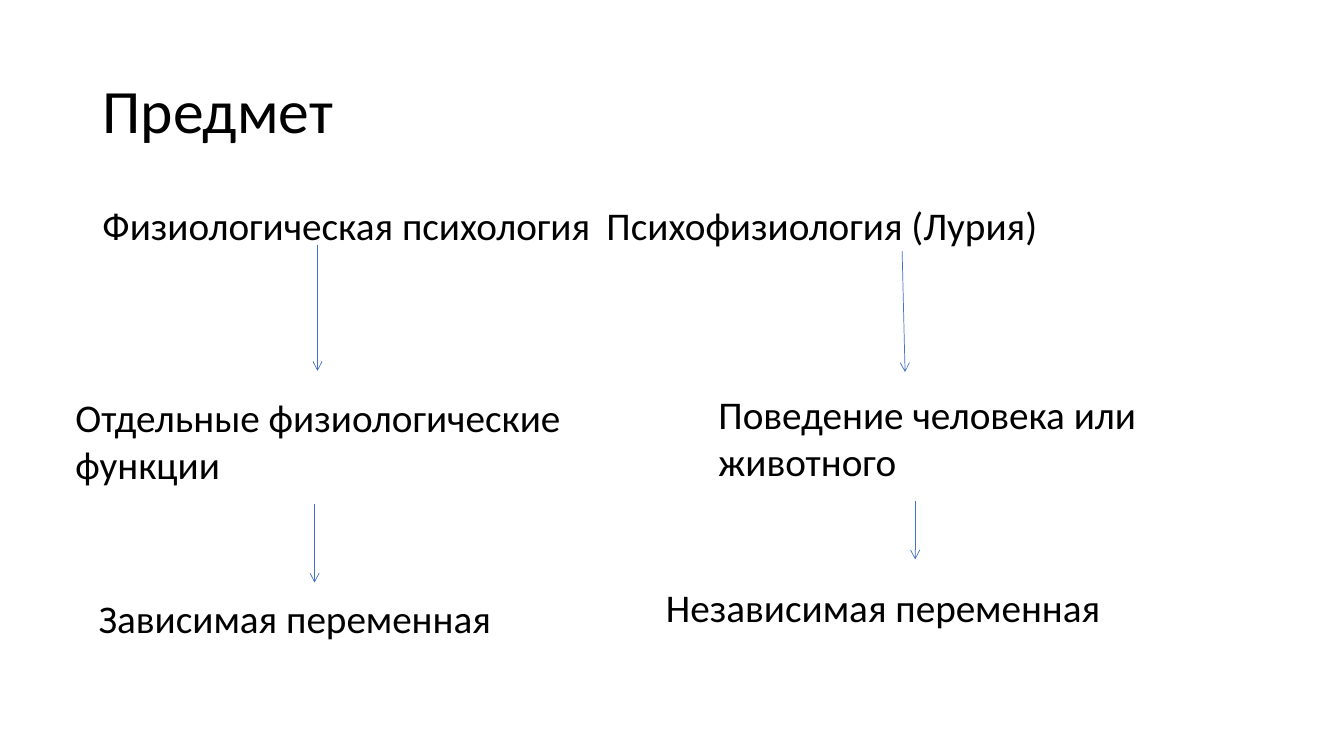
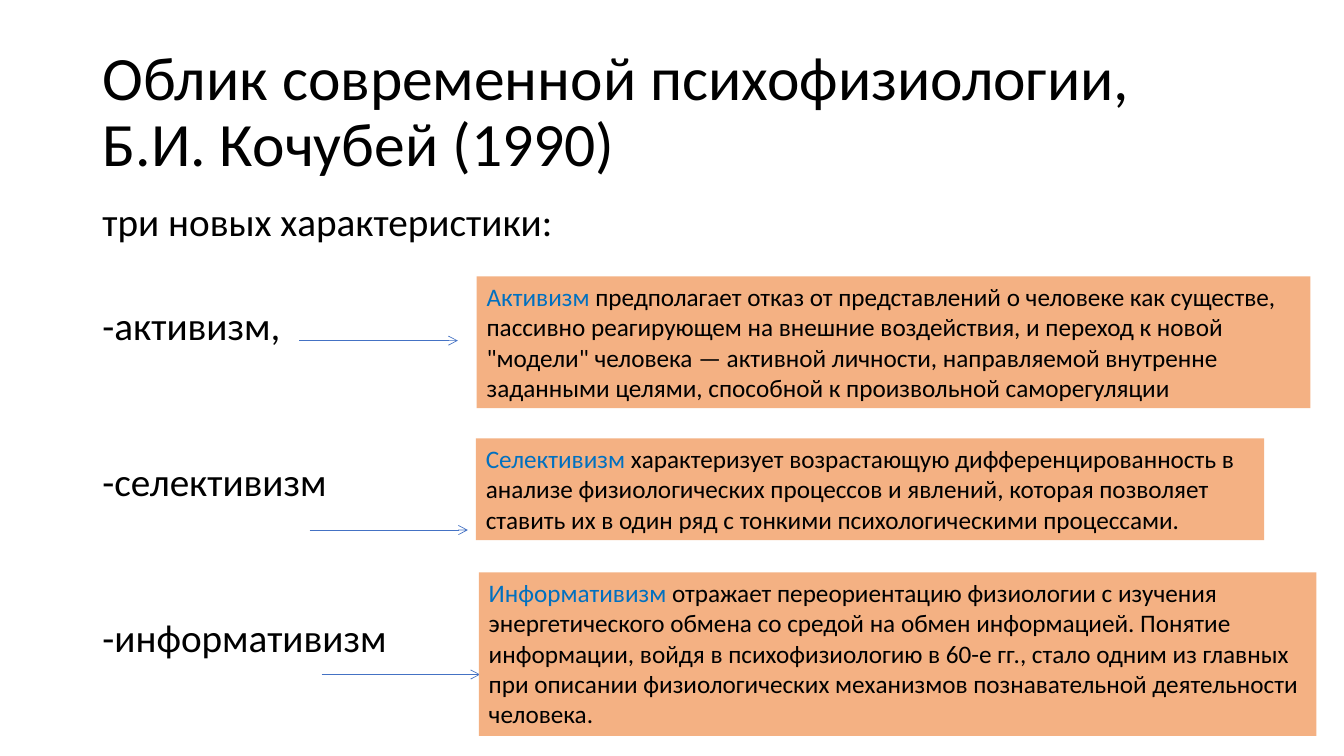
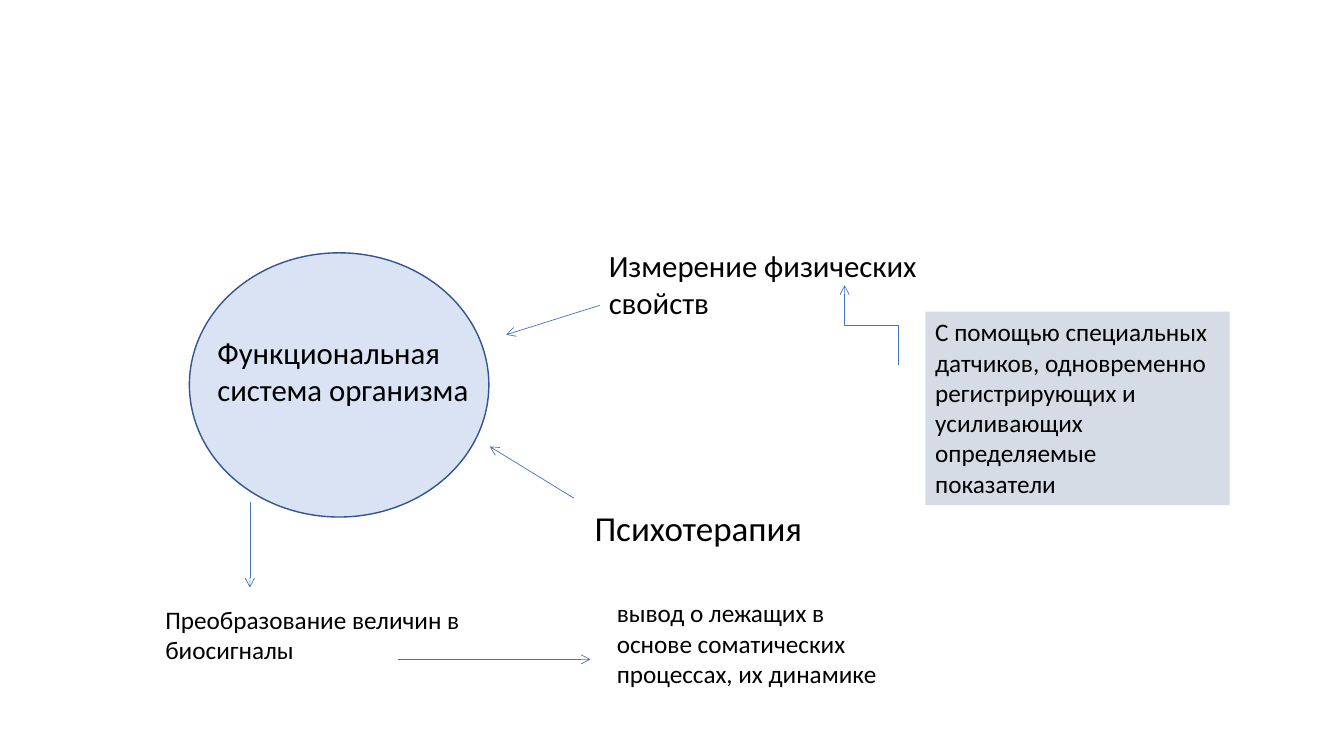
from pptx import Presentation
from pptx.dml.color import RGBColor
from pptx.enum.shapes import MSO_CONNECTOR, MSO_SHAPE
from pptx.enum.text import MSO_ANCHOR, MSO_AUTO_SIZE, PP_ALIGN
from pptx.oxml.ns import qn
from pptx.util import Inches, Pt
from lxml.etree import SubElement

COLS, ROWS = 32, 18
LIST, BLANK = 1, 6


def tint(code):
    return RGBColor.from_string(code)


class Deck:
    font = "Calibri"
    ink, line, accent = "000000", "4472C4", "0070C0"

    def __init__(self):
        self.prs = Presentation()
        self.prs.slide_width = Inches(13.333)
        self.prs.slide_height = Inches(7.5)
        self.page = None

    # Grid and text helpers
    def x(self, col):
        return round(self.prs.slide_width * col / COLS)

    def y(self, row):
        return round(self.prs.slide_height * row / ROWS)

    def area(self, col, row, wide, high):
        return self.x(col), self.y(row), self.x(wide), self.y(high)

    def style(self, para, size):
        font = para.font
        font.name, font.size = self.font, Pt(size)
        font.color.rgb = tint(self.ink)

    def frame(self, shape, anchor=MSO_ANCHOR.TOP):
        frame = shape.text_frame
        frame.word_wrap = True
        frame.auto_size = MSO_AUTO_SIZE.NONE
        frame.vertical_anchor = anchor
        return frame

    # Slides and placeholders
    def add(self, layout):
        self.page = self.prs.slides.add_slide(self.prs.slide_layouts[layout])

    def place(self, shape, *box):
        shape.left, shape.top, shape.width, shape.height = self.area(*box)

    def title(self, words):
        shape = self.page.shapes.title
        self.place(shape, 2.2, 0.95, 27.6, 3.5)
        frame = self.frame(shape, MSO_ANCHOR.MIDDLE)
        frame.text = words
        para = frame.paragraphs[0]
        para.alignment, para.line_spacing = PP_ALIGN.LEFT, 0.9
        self.style(para, 44)

    def body(self, items, pitch, tab=None):
        """Items are pairs of text and space before in points."""
        shape = self.page.placeholders[1]
        self.place(shape, 2.2, 4.8, 27.6, 11.4)
        frame = self.frame(shape)
        for i, (words, gap) in enumerate(items):
            para = frame.add_paragraph() if i else frame.paragraphs[0]
            para.text = words
            para.line_spacing, para.space_before = pitch, Pt(gap)
            props = para._p.get_or_add_pPr()
            props.set("marL", "0")
            props.set("indent", "0")
            SubElement(props, qn("a:buNone"))
            if tab:
                stops = SubElement(props, qn("a:tabLst"))
                SubElement(stops, qn("a:tab"), pos=str(self.x(tab)), algn="l")
            self.style(para, 28)

    # Text, with an optional fill and a coloured first word
    def text(self, words, size, *box, fill=None, lead=None):
        shape = self.page.shapes.add_textbox(*self.area(*box))
        if fill:
            shape.fill.solid()
            shape.fill.fore_color.rgb = tint(fill)
        para = self.frame(shape).paragraphs[0]
        if lead:
            run = para.add_run()
            run.text = lead
            run.font.color.rgb = tint(self.accent)
        para.add_run().text = words
        self.style(para, size)

    def oval(self, *box):
        shape = self.page.shapes.add_shape(MSO_SHAPE.OVAL, *self.area(*box))
        shape.shadow.inherit = False
        shape.fill.solid()
        shape.fill.fore_color.rgb = tint("DAE3F3")
        shape.line.color.rgb = tint("325491")
        shape.line.width = Pt(1)

    # Arrows
    def arrow(self, col, row, to_col, to_row, kind=MSO_CONNECTOR.STRAIGHT):
        link = self.page.shapes.add_connector(
            kind, self.x(col), self.y(row), self.x(to_col), self.y(to_row))
        link.line.color.rgb = tint(self.line)
        link.line.width = Pt(0.5)
        SubElement(link.line._get_or_add_ln(), qn("a:tailEnd"), type="arrow")
        SubElement(link._element.spPr, qn("a:effectLst"))
        return link

    def elbow(self, col, row, to_col, to_row):
        """Bent arrow that leaves upwards, steps left and goes on upwards."""
        mid, level = (col + to_col) / 2, (row + to_row) / 2
        run, rise = (row - to_row) / 2, (col - to_col) / 2
        link = self.arrow(mid - run, level + rise, mid + run, level - rise,
                          MSO_CONNECTOR.ELBOW)
        link._element.spPr.find(qn("a:xfrm")).set("rot", str(270 * 60000))


def subject(deck):
    deck.add(LIST)
    deck.title("Предмет")
    deck.body([("Физиологическая психология\tПсихофизиология (Лурия)", 0)],
              0.9, tab=14.57)
    for words, *box in (
        ("Отдельные физиологические функции", 1.56, 9.24, 12.36, 2.5),
        ("Поведение человека или животного", 16.87, 9.17, 11.64, 2.5),
        ("Независимая переменная", 15.62, 13.78, 13.58, 1.37),
        ("Зависимая переменная", 2.11, 14.04, 11.26, 1.37),
    ):
        deck.text(words, 28, *box)
    for ends in ((7.56, 5.83, 7.56, 8.83), (21.48, 5.98, 21.55, 8.86),
                 (21.79, 11.93, 21.79, 13.32), (7.49, 12, 7.49, 13.87)):
        deck.arrow(*ends)


def traits(deck):
    deck.add(LIST)
    deck.title("Облик современной психофизиологии,\vБ.И. Кочубей (1990)")
    deck.body([("три новых характеристики:", 0), ("-активизм,", 47.3),
               ("-селективизм", 84.6), ("-информативизм", 84.6)], 0.8)
    for col, row in ((7.13, 8.11), (7.37, 12.62), (7.66, 16.06)):
        deck.arrow(col, row, col + 3.77, row)
    for lead, words, *box in (
        ("Активизм", " предполагает отказ от представлений о человеке как "
         "существе, пассивно реагирующем на внешние воздействия, и переход к "
         "новой \"модели\" человека — активной личности, направляемой "
         "внутренне заданными целями, способной к произвольной саморегуляции",
         11.35, 6.58, 19.85, 3.14),
        ("Селективизм", " характеризует возрастающую дифференцированность в "
         "анализе физиологических процессов и явлений, которая позволяет "
         "ставить их в один ряд с тонкими психологическими процессами.",
         11.33, 10.44, 18.77, 2.42),
        ("Информативизм ", "отражает переориентацию физиологии с изучения "
         "энергетического обмена со средой на обмен информацией. Понятие "
         "информации, войдя в психофизиологию в 60-е гг., стало одним из "
         "главных при описании физиологических механизмов познавательной "
         "деятельности человека.", 11.4, 13.63, 19.94, 3.89),
    ):
        deck.text(words, 18, *box, fill="F4B183", lead=lead)


def system(deck):
    deck.add(BLANK)
    deck.oval(4.51, 6.02, 7.13, 6.29)
    for words, size, *box in (
        ("Функциональная система организма", 22, 4.94, 7.82, 7.2, 2.74),
        ("Измерение физических свойств", 22, 14.26, 5.76, 8.02, 2.74),
        ("Преобразование величин в биосигналы", 18, 3.7, 14.26, 9.89, 2.42),
        ("вывод о лежащих в основе соматических процессах, их динамике", 18,
         14.45, 14.11, 7.13, 2.42),
        ("Психотерапия", 25, 13.92, 11.95, 7.61, 1.97),
    ):
        deck.text(words, size, *box)
    deck.text("С помощью специальных датчиков, одновременно регистрирующих и "
              "усиливающих определяемые показатели", 18,
              22.03, 7.42, 7.25, 4.61, fill="D6DCE5")
    for ends in ((14.28, 7.27, 12.05, 7.97), (5.95, 11.95, 5.95, 13.99),
                 (9.48, 15.7, 14.06, 15.7), (13.66, 11.86, 11.66, 10.63)):
        deck.arrow(*ends)
    deck.elbow(21.38, 8.69, 20.11, 6.79)


def main():
    deck = Deck()
    for build in (subject, traits, system):
        build(deck)
    deck.prs.save("out.pptx")


if __name__ == "__main__":
    main()
